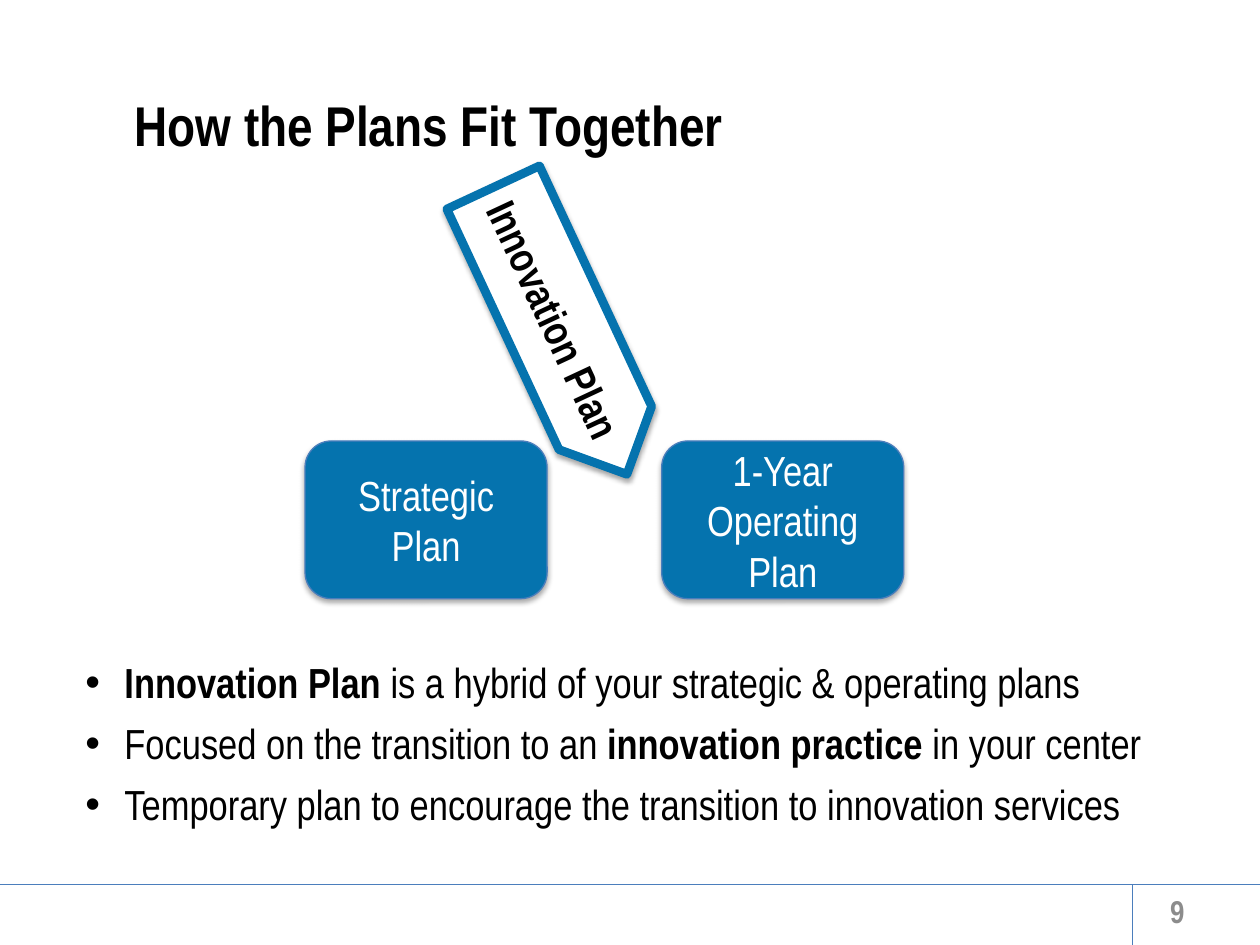
"""Build the slide showing how the innovation plan joins the other plans."""
from lxml import etree
from pptx import Presentation
from pptx.dml.color import RGBColor
from pptx.enum.shapes import MSO_CONNECTOR, MSO_SHAPE
from pptx.enum.text import MSO_ANCHOR, PP_ALIGN
from pptx.oxml.ns import qn
from pptx.util import Cm, Pt

STRAIGHT = MSO_CONNECTOR.STRAIGHT
ROUNDED, PENTAGON = MSO_SHAPE.ROUNDED_RECTANGLE, MSO_SHAPE.PENTAGON
TOP, MIDDLE = MSO_ANCHOR.TOP, MSO_ANCHOR.MIDDLE
LEFT, CENTER, RIGHT = PP_ALIGN.LEFT, PP_ALIGN.CENTER, PP_ALIGN.RIGHT
BLACK = RGBColor(0x00, 0x00, 0x00)
WHITE = RGBColor(0xFF, 0xFF, 0xFF)
BLUE = RGBColor(0x05, 0x73, 0xAE)
RULE_BLUE = RGBColor(0x4B, 0x7E, 0xBC)
GRAY = RGBColor(0x8C, 0x8C, 0x8C)
FONT = "Arial Narrow"
WIDTH, HEIGHT = 25.4, 19.05
FOOTER_TOP, NUMBER_LEFT = 17.83, 22.83
INDENT = 0.79

TITLE = "How the Plans Fit Together"
PAGE_NUMBER = "9"
INNOVATION = "Innovation Plan"
PLANS = ["Strategic Plan", "1-Year Operating Plan"]
PLAN_LEFT, PLAN_TOP, PLAN_STEP = 6.15, 8.89, 7.19
PLAN_SIZE = (4.88, 3.18)
BULLETS = [
    [("Innovation Plan ", True), ("is a hybrid of your strategic & operating plans", False)],
    [("Focused on the transition to an ", False), ("innovation practice ", True),
     ("in your center", False)],
    [("Temporary plan to encourage the transition to innovation services", False)],
]
RULES = [
    (0, FOOTER_TOP, WIDTH, FOOTER_TOP),
    (NUMBER_LEFT, FOOTER_TOP, NUMBER_LEFT, HEIGHT),
]


def style(span, size, color, bold=False):
    span.font.name = FONT
    span.font.size = Pt(size)
    span.font.color.rgb = color
    span.font.bold = bold


def write(box, text, size, color, bold, align, anchor):
    frame = box.text_frame
    frame.word_wrap = True
    frame.vertical_anchor = anchor
    frame.text = text
    para = frame.paragraphs[0]
    para.alignment = align
    style(para.runs[0], size, color, bold)


def add_text(page, place, *text_style):
    box = page.shapes.add_textbox(*map(Cm, place))
    write(box, *text_style)


def add_shadow(shape):
    shape.shadow.inherit = False
    effects = shape._element.spPr.find(qn("a:effectLst"))
    shadow = etree.SubElement(effects, qn("a:outerShdw"), blurRad=str(Pt(3.1)),
                              dist=str(Pt(1.8)), dir="5400000", rotWithShape="0")
    color = etree.SubElement(shadow, qn("a:srgbClr"), val=str(BLACK))
    etree.SubElement(color, qn("a:alpha"), val="35000")


def add_plan(page, kind, place, text, fill, outline, weight, color, bold):
    shape = page.shapes.add_shape(kind, *map(Cm, place))
    shape.fill.solid()
    shape.fill.fore_color.rgb = fill
    shape.line.color.rgb = outline
    shape.line.width = Pt(weight)
    add_shadow(shape)
    write(shape, text, 24, color, bold, CENTER, MIDDLE)
    return shape


def add_rule(page, ends):
    rule = page.shapes.add_connector(STRAIGHT, *map(Cm, ends))
    rule.line.color.rgb = RULE_BLUE
    rule.line.width = Pt(0.75)
    etree.SubElement(rule._element.spPr, qn("a:effectLst"))


def add_bullets(page, place):
    frame = page.shapes.add_textbox(*map(Cm, place)).text_frame
    frame.word_wrap = True
    for index, spans in enumerate(BULLETS):
        para = frame.add_paragraph() if index else frame.paragraphs[0]
        para.space_after = Pt(6)
        properties = para._p.get_or_add_pPr()
        properties.set("marL", str(Cm(INDENT)))
        properties.set("indent", str(-Cm(INDENT)))
        etree.SubElement(properties, qn("a:buFont"), typeface="Arial")
        etree.SubElement(properties, qn("a:buChar"), char="•")
        for text, bold in spans:
            span = para.add_run()
            span.text = text
            style(span, 24, BLACK, bold)


def main():
    deck = Presentation()
    deck.slide_width, deck.slide_height = Cm(WIDTH), Cm(HEIGHT)
    page = deck.slides.add_slide(deck.slide_layouts[6])
    for ends in RULES:
        add_rule(page, ends)
    for index, text in enumerate(PLANS):
        place = (PLAN_LEFT + index * PLAN_STEP, PLAN_TOP, *PLAN_SIZE)
        add_plan(page, ROUNDED, place, text, BLUE, RULE_BLUE, 0.75, WHITE, False)
    arrow = add_plan(page, PENTAGON, (8.1, 5.64, 6.38, 2.06), INNOVATION,
                     WHITE, BLUE, 5, BLACK, True)
    arrow.rotation = 65
    add_bullets(page, (1.47, 13.11, 23.06, 3.76))
    add_text(page, (18.21, 18.06, 5.92, 0.61), PAGE_NUMBER, 18, GRAY, True, RIGHT, MIDDLE)
    add_text(page, (2.46, 1.7, 20.52, 1.63), TITLE, 32, BLACK, True, LEFT, TOP)
    deck.save("out.pptx")


if __name__ == "__main__":
    main()
